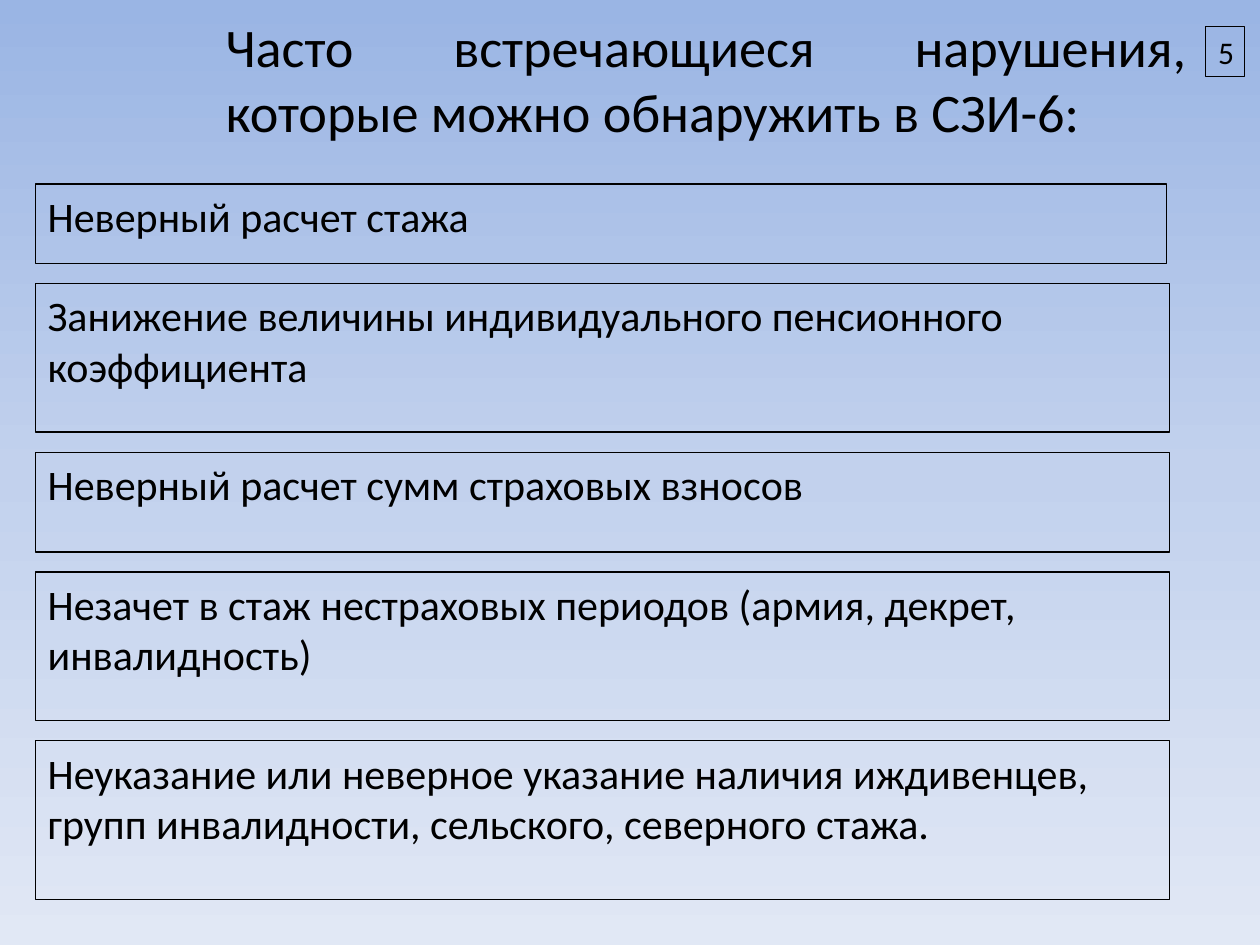
import copy
import pptx
import pptx.util
import pptx.dml.color
import pptx.enum.text

Inches = pptx.util.Inches
Pt = pptx.util.Pt

TITLE = "Часто встречающиеся нарушения, которые можно обнаружить в СЗИ-6:"
PAGE_NUMBER = "5"
VIOLATIONS = [
    ("Неверный расчет стажа", 8.98, 0.63),
    ("Занижение величины индивидуального пенсионного коэффициента", 9, 1.18),
    ("Неверный расчет сумм страховых взносов", 9, 0.79),
    ("Незачет в стаж нестраховых периодов (армия, декрет, инвалидность)", 9, 1.18),
    ("Неуказание или неверное указание наличия иждивенцев, "
     "групп инвалидности, сельского, северного стажа.", 9, 1.26),
]
BACKGROUND = [(0, "9AB5E4"), (0.5, "C2D1ED"), (1, "E1E8F5")]
BLACK = "000000"
FONT = "Calibri"
LEFT, FIRST_TOP, GAP = 0.28, 1.46, 0.16


def color(value):
    return pptx.dml.color.RGBColor.from_string(value)


def paint_background(slide):
    fill = slide.background.fill
    fill.gradient()
    fill.gradient_angle = 270
    stop_list = fill._fill._gradFill.gsLst
    stop_list.insert(1, copy.deepcopy(stop_list[0]))
    for stop, (position, value) in zip(fill.gradient_stops, BACKGROUND):
        stop.position = position
        stop.color.rgb = color(value)


def write(shape, text, size):
    frame = shape.text_frame
    frame.word_wrap = True
    frame.auto_size = pptx.enum.text.MSO_AUTO_SIZE.NONE
    paragraph = frame.paragraphs[0]
    run = paragraph.add_run()
    run.text = text
    run.font.name = FONT
    run.font.size = Pt(size)
    run.font.color.rgb = color(BLACK)
    return paragraph


def add_box(slide, left, top, width, height, text, size):
    box = slide.shapes.add_textbox(
        Inches(left), Inches(top), Inches(width), Inches(height))
    box.line.color.rgb = color(BLACK)
    box.line.width = Pt(0.75)
    return box, write(box, text, size)


def main():
    presentation = pptx.Presentation()
    presentation.slide_width = Inches(10)
    presentation.slide_height = Inches(7.5)
    slide = presentation.slides.add_slide(presentation.slide_layouts[5])
    paint_background(slide)

    title = slide.shapes.title
    title.left, title.top = Inches(1.69), Inches(0)
    title.width, title.height = Inches(7.82), Inches(1.25)
    heading = write(title, TITLE, 31)
    heading.alignment = pptx.enum.text.PP_ALIGN.JUSTIFY
    title.text_frame.vertical_anchor = pptx.enum.text.MSO_ANCHOR.MIDDLE

    top = FIRST_TOP
    for text, width, height in VIOLATIONS:
        box, paragraph = add_box(slide, LEFT, top, width, height, text, 24)
        paragraph.space_before = Pt(4.8)
        top += height + GAP

    number, paragraph = add_box(slide, 9.57, 0.21, 0.31, 0.4, PAGE_NUMBER, 18)
    number.text_frame.auto_size = pptx.enum.text.MSO_AUTO_SIZE.SHAPE_TO_FIT_TEXT

    presentation.save("out.pptx")


if __name__ == "__main__":
    main()
